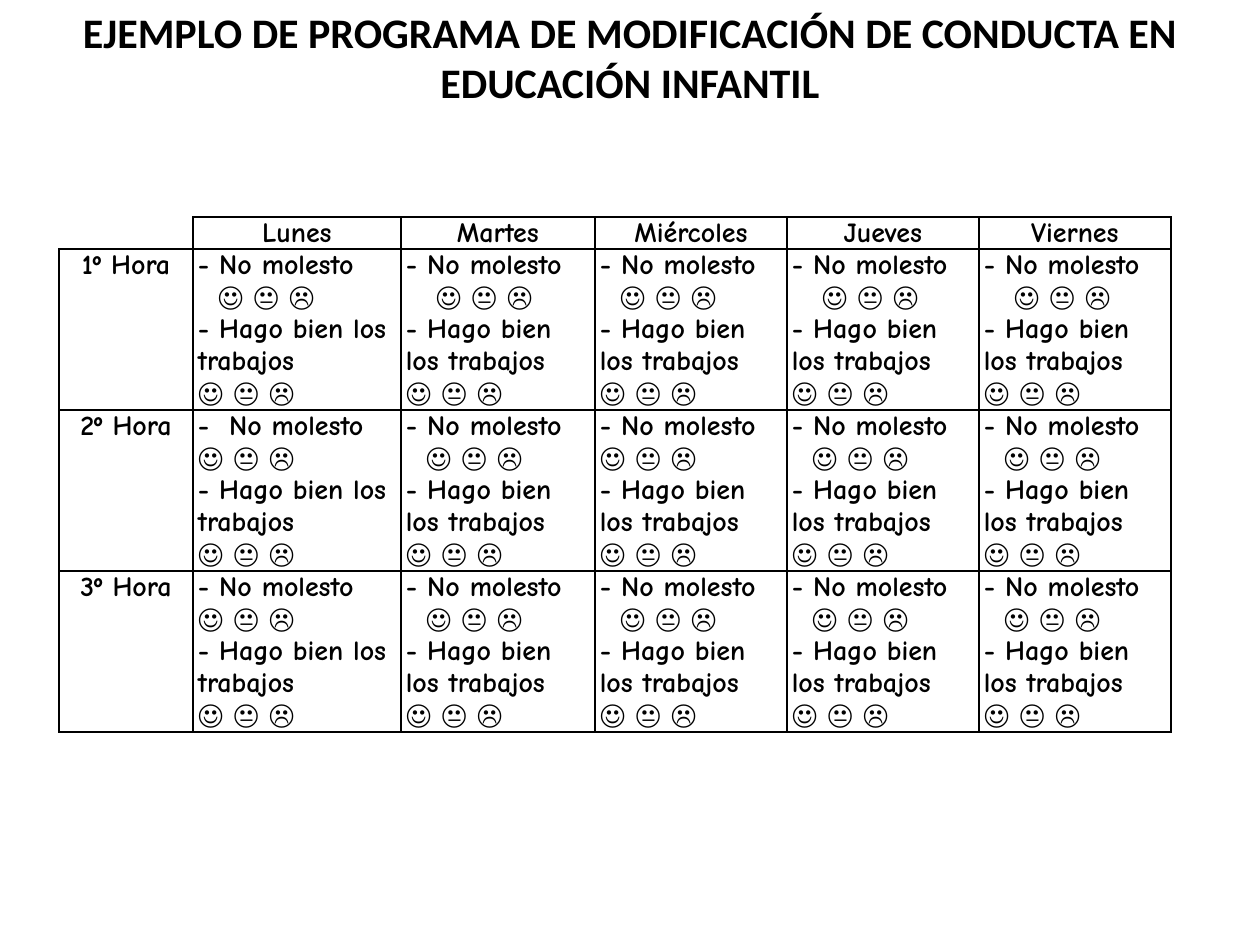
from lxml import etree
from pptx import Presentation
from pptx import util as u
from pptx.dml.color import RGBColor
from pptx.enum import text
from pptx.oxml import ns

PX = 914400 // 126
BLACK = "000000"
FACES = "☺ 😐 ☹"
DAYS = ["Lunes", "Martes", "Miércoles", "Jueves", "Viernes"]
COLUMN_WIDTHS = [134, 208, 194, 192, 192, 192]
HEADER_HEIGHT, HOUR_HEIGHT = 32, 161
# Indent of the first row of faces, per hour and day
FACE_INDENTS = [
    [20, 30, 20, 30, 30],
    [0, 20, 0, 20, 20],
    [0, 20, 20, 20, 20],
]


def px(n):
    return u.Emu(n * PX)


def color(value):
    return RGBColor.from_string(value)


def format_run(r, font, size):
    r.font.name = font
    r.font.size = u.Pt(size)
    r.font.bold = True
    r.font.color.rgb = color(BLACK)


def add_title(s, title):
    sp = s.shapes.title
    sp.left, sp.top, sp.width, sp.height = px(0), px(0), px(1260), px(117)
    tf = sp.text_frame
    tf.text = title
    tf.word_wrap = True
    tf.auto_size = text.MSO_AUTO_SIZE.NONE
    tf.vertical_anchor = text.MSO_ANCHOR.TOP
    p = tf.paragraphs[0]
    p.alignment = text.PP_ALIGN.CENTER
    p.line_spacing = 1.0
    p.space_before = u.Pt(0)
    p.space_after = u.Pt(6)
    format_run(p.runs[0], "Calibri", 24)


def set_borders(cell, sides):
    """Draw the named sides (of L, R, T, B) and clear the others."""
    tc_pr = cell._tc.get_or_add_tcPr()
    for side in "LRTB":
        ln = etree.SubElement(tc_pr, ns.qn(f"a:ln{side}"), w=str(u.Pt(1)))
        if side in sides:
            fill = etree.SubElement(ln, ns.qn("a:solidFill"))
            etree.SubElement(fill, ns.qn("a:srgbClr"), val=BLACK)
        else:
            etree.SubElement(ln, ns.qn("a:noFill"))


def fill_cell(cell, lines, align=text.PP_ALIGN.LEFT, sides="LRTB"):
    """Write lines of (text, left indent) into a bordered cell."""
    cell.margin_left = cell.margin_right = px(5)
    cell.margin_top = cell.margin_bottom = 0
    set_borders(cell, sides)
    cell.fill.background()
    tf = cell.text_frame
    tf.text = "\n".join(line for line, _ in lines)
    for p, (_, indent) in zip(tf.paragraphs, lines):
        p.alignment = align
        if indent:
            p._p.get_or_add_pPr().set("marL", str(px(indent)))
        for r in p.runs:
            format_run(r, "Comic Neue", 16)


def add_schedule(s):
    height = HEADER_HEIGHT + HOUR_HEIGHT * len(FACE_INDENTS)
    table = s.shapes.add_table(
        len(FACE_INDENTS) + 1, len(COLUMN_WIDTHS),
        px(59), px(217), px(sum(COLUMN_WIDTHS)), px(height)).table
    table.first_row = table.horz_banding = False
    for column, width in zip(table.columns, COLUMN_WIDTHS):
        column.width = px(width)
    for i, row in enumerate(table.rows):
        row.height = px(HOUR_HEIGHT if i else HEADER_HEIGHT)

    corner = table.cell(0, 0)
    fill_cell(corner, [], sides="RB")
    end = etree.SubElement(corner.text_frame.paragraphs[0]._p, ns.qn("a:endParaRPr"))
    end.set("sz", "1200")
    for col, day in enumerate(DAYS, 1):
        fill_cell(table.cell(0, col), [(day, 0)], text.PP_ALIGN.CENTER)
    for hour, indents in enumerate(FACE_INDENTS, 1):
        fill_cell(table.cell(hour, 0), [(f"{hour}º Hora", 0)], text.PP_ALIGN.CENTER)
        for col, indent in enumerate(indents, 1):
            quiet = "-  No molesto" if (hour, col) == (2, 1) else "- No molesto"
            fill_cell(table.cell(hour, col), [
                (quiet, 0), (FACES, indent),
                ("- Hago bien los trabajos", 0), (FACES, 0)])


def main():
    prs = Presentation()
    prs.slide_width, prs.slide_height = u.Inches(10), u.Inches(7.5)
    s = prs.slides.add_slide(prs.slide_layouts[5])
    add_title(s, "EJEMPLO DE PROGRAMA DE MODIFICACIÓN DE CONDUCTA EN EDUCACIÓN INFANTIL")
    add_schedule(s)
    prs.save("out.pptx")


if __name__ == "__main__":
    main()
